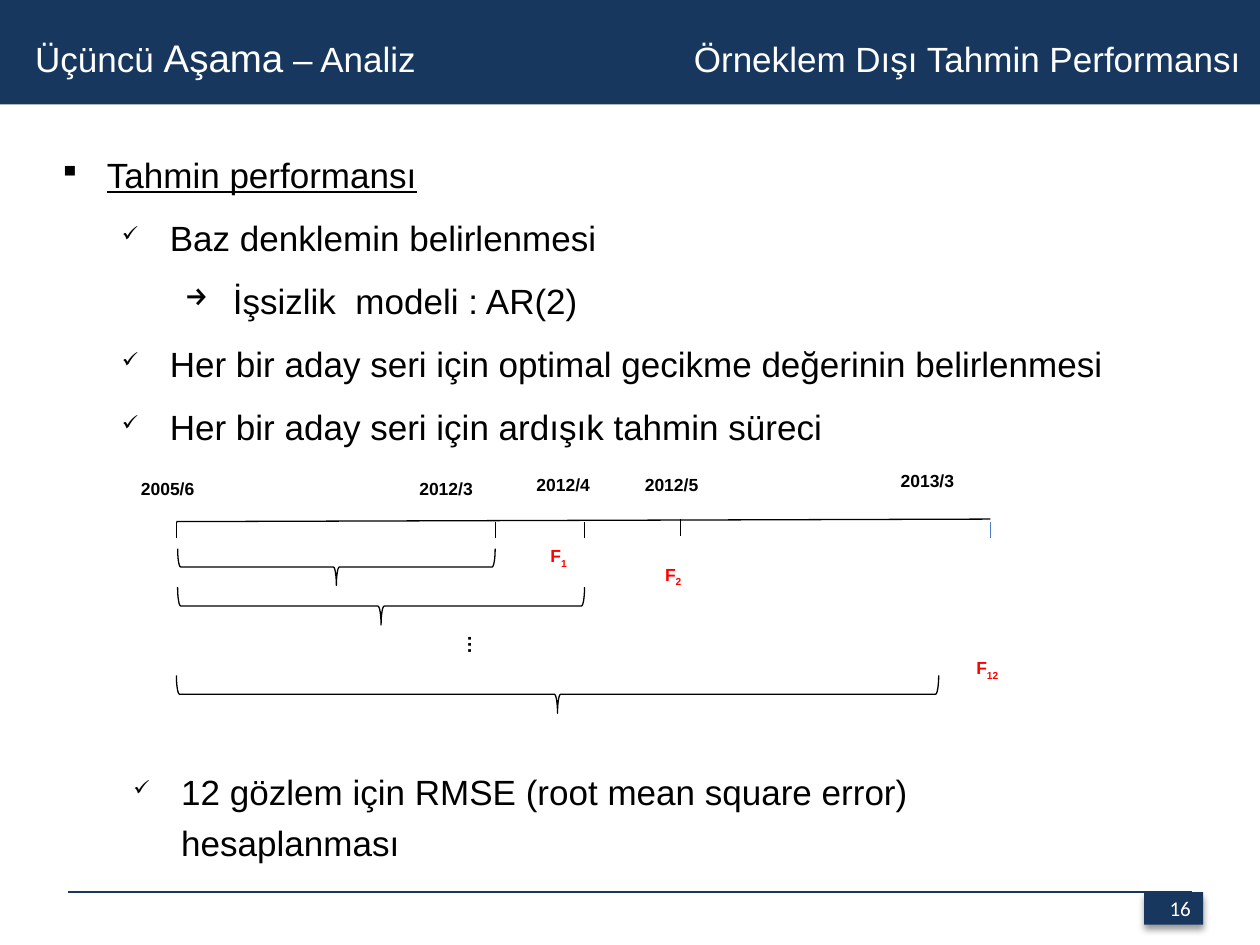
from dataclasses import dataclass

from lxml.etree import SubElement
from pptx import Presentation
from pptx.dml.color import RGBColor
from pptx.enum.shapes import MSO_CONNECTOR as Connector, MSO_SHAPE as Shape
from pptx.enum.text import MSO_ANCHOR as Anchor, PP_ALIGN as Align
from pptx.oxml.ns import qn
from pptx.util import Inches, Pt

COLORS = {"navy": "17375E", "white": "FFFFFF", "black": "000000",
          "red": "FF0000", "blue": "4B7EBC"}


@dataclass
class Bullet:
    text: str
    level: int = 1
    mark: str = "✓"
    size: int = 60
    underline: bool = False


@dataclass
class Label:
    text: str
    left: float
    top: float
    width: float
    height: float
    color: str = "black"
    size: int = 10
    subscript: str = ""
    vertical: bool = False


@dataclass
class Tick:
    x: float
    top: float = 4.14
    color: str = "black"


@dataclass
class Brace:
    left: float
    right: float
    middle: float
    depth: float = 0.3


def rgb(name: str) -> RGBColor:
    return RGBColor.from_string(COLORS[name])


def add_span(para, text: str, size: float, color: str = "black",
             bold: bool = False, font: str = "Arial"):
    span = para.add_run()
    span.text = text
    span.font.name = font
    span.font.size = Pt(size)
    span.font.bold = bold
    span.font.color.rgb = rgb(color)
    return span


def add_box(shapes, left: float, top: float, width: float, height: float):
    box = shapes.add_textbox(Inches(left), Inches(top), Inches(width), Inches(height))
    box.text_frame.word_wrap = True
    return box


def add_block(shapes, left: float, top: float, width: float, height: float):
    block = shapes.add_shape(Shape.RECTANGLE, Inches(left), Inches(top),
                             Inches(width), Inches(height))
    block.shadow.inherit = False
    block.fill.solid()
    block.fill.fore_color.rgb = rgb("navy")
    block.line.fill.background()
    return block


def add_line(shapes, x1: float, y1: float, x2: float, y2: float,
             color: str = "black") -> None:
    line = shapes.add_connector(Connector.STRAIGHT, Inches(x1), Inches(y1),
                                Inches(x2), Inches(y2))
    line.line.color.rgb = rgb(color)
    line.line.width = Pt(0.75)
    SubElement(line._element.spPr, qn("a:effectLst"))


def add_brace(shapes, brace: Brace) -> None:
    # A left brace turned by 270 degrees opens upwards
    length = brace.right - brace.left
    center = (brace.left + brace.right) / 2
    shape = shapes.add_shape(
        Shape.LEFT_BRACE, Inches(center - brace.depth / 2),
        Inches(brace.middle - length / 2), Inches(brace.depth), Inches(length))
    shape.rotation = 270
    shape.shadow.inherit = False
    shape.fill.background()
    shape.line.color.rgb = rgb("black")
    shape.line.width = Pt(0.75)


def add_label(shapes, label: Label) -> None:
    box = add_box(shapes, label.left, label.top, label.width, label.height)
    para = box.text_frame.paragraphs[0]
    para.line_spacing = 1.15
    para.space_after = Pt(10)
    add_span(para, label.text, label.size, label.color, bold=True)
    if label.subscript:
        span = add_span(para, label.subscript, label.size, label.color, bold=True)
        span.font._element.set("baseline", "-25000")
    if label.vertical:
        box.text_frame._txBody.bodyPr.set("vert", "vert270")


def add_bullets(box, bullets: list[Bullet], spacing: float) -> None:
    frame = box.text_frame
    for index, bullet in enumerate(bullets):
        para = frame.add_paragraph() if index else frame.paragraphs[0]
        para.level = bullet.level
        para.line_spacing = spacing
        props = para._p.get_or_add_pPr()
        props.set("marL", str(Inches(0.38 + 0.5 * bullet.level)))
        props.set("indent", str(Inches(-0.38)))
        SubElement(props, qn("a:buSzPct"), val=str(bullet.size * 1000))
        SubElement(props, qn("a:buChar"), char=bullet.mark)
        add_span(para, bullet.text, 20).font.underline = bullet.underline


deck = Presentation()
deck.slide_width, deck.slide_height = Inches(10), Inches(7.5)
page = deck.slides.add_slide(deck.slide_layouts[6])

# Header band with the section on the left and the topic on a right tab
add_block(page.shapes, 0, 0, 10, 0.83)
title = add_box(page.shapes, 0.18, 0.22, 9.82, 0.47).text_frame.paragraphs[0]
tabs = SubElement(title._p.get_or_add_pPr(), qn("a:tabLst"))
SubElement(tabs, qn("a:tab"), pos=str(Inches(9.57)), algn="r")
for text, size in (("Üçüncü ", 20), ("Aşama", 22),
                   (" – Analiz\tÖrneklem Dışı Tahmin Performansı", 20)):
    add_span(title, text, size, "white")

# Footer rule and page number
number_box = add_block(page.shapes, 9.08, 7.08, 0.47, 0.26)
effects = number_box._element.spPr.find(qn("a:effectLst"))
shadow = SubElement(effects, qn("a:outerShdw"), blurRad=str(Pt(4)),
                    dist=str(Pt(3)), dir="5400000", rotWithShape="0")
shade = SubElement(shadow, qn("a:srgbClr"), val=COLORS["black"])
SubElement(shade, qn("a:alpha"), val="40000")
number_box.text_frame.vertical_anchor = Anchor.MIDDLE
number = number_box.text_frame.paragraphs[0]
number.alignment = Align.RIGHT
add_span(number, "16", 12, "white", font="Calibri")
add_line(page.shapes, 0.54, 7.08, 9.46, 7.08, "navy")

# Bullet lists above and below the timeline
add_bullets(add_box(page.shapes, 0.37, 1, 9.44, 2.63), [
    Bullet("Tahmin performansı", 0, "▪", 85, underline=True),
    Bullet("Baz denklemin belirlenmesi"),
    Bullet("İşsizlik  modeli : AR(2)", 2, "→", 85),
    Bullet("Her bir aday seri için optimal gecikme değerinin belirlenmesi"),
    Bullet("Her bir aday seri için ardışık tahmin süreci"),
], 1.5)
add_bullets(add_box(page.shapes, 0.46, 6, 8.25, 0.91), [
    Bullet("12 gözlem için RMSE (root mean square error) hesaplanması"),
], 1.2)

# Timeline: axis, ticks, estimation windows and labels
timeline = page.shapes.add_group_shape().shapes
add_line(timeline, 1.4, 4.14, 7.86, 4.12)
for tick in (Tick(1.4), Tick(3.93), Tick(4.64), Tick(5.4, 4.12),
             Tick(7.86, color="blue")):
    add_line(timeline, tick.x, tick.top, tick.x, tick.top + 0.13, tick.color)

for window in (Brace(1.41, 3.93, 4.5, 0.29), Brace(1.41, 4.64, 4.81),
               Brace(1.4, 7.45, 5.51)):
    add_brace(timeline, window)

for label in (
    Label("2005/6", 1.02, 3.72, 1.32, 0.42),
    Label("2012/3", 3.23, 3.72, 1.11, 0.42),
    Label("2012/4", 4.16, 3.69, 1.24, 0.44),
    Label("2012/5", 5.02, 3.69, 1.16, 0.45),
    Label("2013/3", 7.05, 3.66, 1.27, 0.61),
    Label("F", 4.27, 4.25, 0.63, 0.53, "red", subscript="1"),
    Label("F", 5.18, 4.4, 0.63, 0.56, "red", subscript="2"),
    Label("F", 7.65, 5.14, 0.42, 0.3, "red", subscript="12"),
    Label("…", 3.51, 4.63, 0.83, 0.66, size=11, vertical=True),
):
    add_label(timeline, label)

deck.save("out.pptx")
